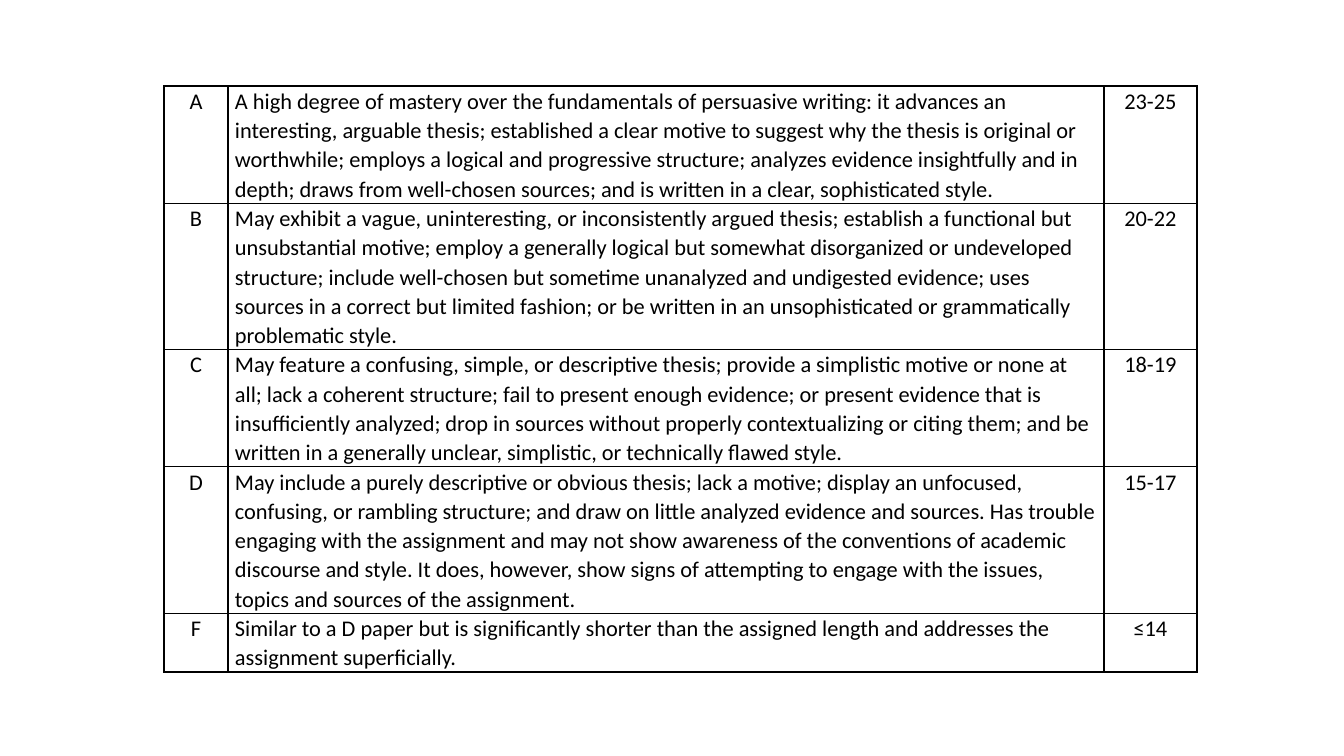
from lxml import etree
from pptx import Presentation
from pptx.dml.color import RGBColor
from pptx.enum.text import PP_ALIGN as AL
from pptx.oxml import parse_xml
from pptx.oxml.ns import nsdecls
from pptx.util import Pt

GRADES = [
    ("A", 4, "A high degree of mastery over the fundamentals of persuasive writing: it advances an "
     "interesting, arguable thesis; established a clear motive to suggest why the thesis is original or "
     "worthwhile; employs a logical and progressive structure; analyzes evidence insightfully and in "
     "depth; draws from well-chosen sources; and is written in a clear, sophisticated style.", "23-25"),
    ("B", 5, "May exhibit a vague, uninteresting, or inconsistently argued thesis; establish a functional but "
     "unsubstantial motive; employ a generally logical but somewhat disorganized or undeveloped "
     "structure; include well-chosen but sometime unanalyzed and undigested evidence; uses "
     "sources in a correct but limited fashion; or be written in an unsophisticated or grammatically "
     "problematic style.", "20-22"),
    ("C", 4, "May feature a confusing, simple, or descriptive thesis; provide a simplistic motive or none at "
     "all; lack a coherent structure; fail to present enough evidence; or present evidence that is "
     "insufficiently analyzed; drop in sources without properly contextualizing or citing them; and be "
     "written in a generally unclear, simplistic, or technically flawed style.", "18-19"),
    ("D", 5, "May include a purely descriptive or obvious thesis; lack a motive; display an unfocused, "
     "confusing, or rambling structure; and draw on little analyzed evidence and sources. Has trouble "
     "engaging with the assignment and may not show awareness of the conventions of academic "
     "discourse and style. It does, however, show signs of attempting to engage with the issues, "
     "topics and sources of the assignment.", "15-17"),
    ("F", 2, "Similar to a D paper but is significantly shorter than the assigned length and addresses the "
     "assignment superficially.", "≤14"),
]
LEFT, TOP, LINE = 164, 86, 28
COLS = [(64, AL.CENTER), (876, AL.LEFT), (93, AL.CENTER)]
INK, PAPER = "000000", "FFFFFF"
FONT = {"name": "Calibri", "size": Pt(16), "bold": False}


def px(n):
    return round(n * 914400 / 100.8)


def rgb(code):
    return RGBColor.from_string(code)


def set_all(obj, values):
    for name, value in values.items():
        setattr(obj, name, value)


def add_borders(cell):
    tc_pr = cell._tc.get_or_add_tcPr()
    for i, side in enumerate("LRTB"):
        tc_pr.insert(i, parse_xml(
            f'<a:ln{side} {nsdecls("a")} w="{Pt(1)}"><a:solidFill>'
            f'<a:srgbClr val="{INK}"/></a:solidFill></a:ln{side}>'))


def fill_cell(cell, text, align):
    set_all(cell, {"margin_left": px(7), "margin_right": px(7), "margin_top": 0, "margin_bottom": 0})
    cell.fill.solid()
    cell.fill.fore_color.rgb = rgb(PAPER)
    add_borders(cell)
    p = cell.text_frame.paragraphs[0]
    set_all(p, {"alignment": align, "line_spacing": 1.07})
    r = p.add_run()
    r.text = text
    set_all(r.font, FONT)
    r.font.color.rgb = rgb(INK)


def main():
    prs = Presentation()
    set_all(prs, {"slide_width": px(1344), "slide_height": px(756)})
    s = prs.slides.add_slide(prs.slide_layouts[6])
    width = sum(w for w, _ in COLS)
    height = LINE * sum(lines for _, lines, _, _ in GRADES)
    table = s.shapes.add_table(len(GRADES), len(COLS), px(LEFT), px(TOP), px(width), px(height)).table
    set_all(table, {"first_row": False, "horz_banding": False})
    for col, (w, _) in zip(table.columns, COLS):
        col.width = px(w)
    for row, (grade, lines, criteria, points) in zip(table.rows, GRADES):
        row.height = px(LINE * lines)
        for cell, text, (_, align) in zip(row.cells, (grade, criteria, points), COLS):
            fill_cell(cell, text, align)
    prs.save("out.pptx")


if __name__ == "__main__":
    main()
